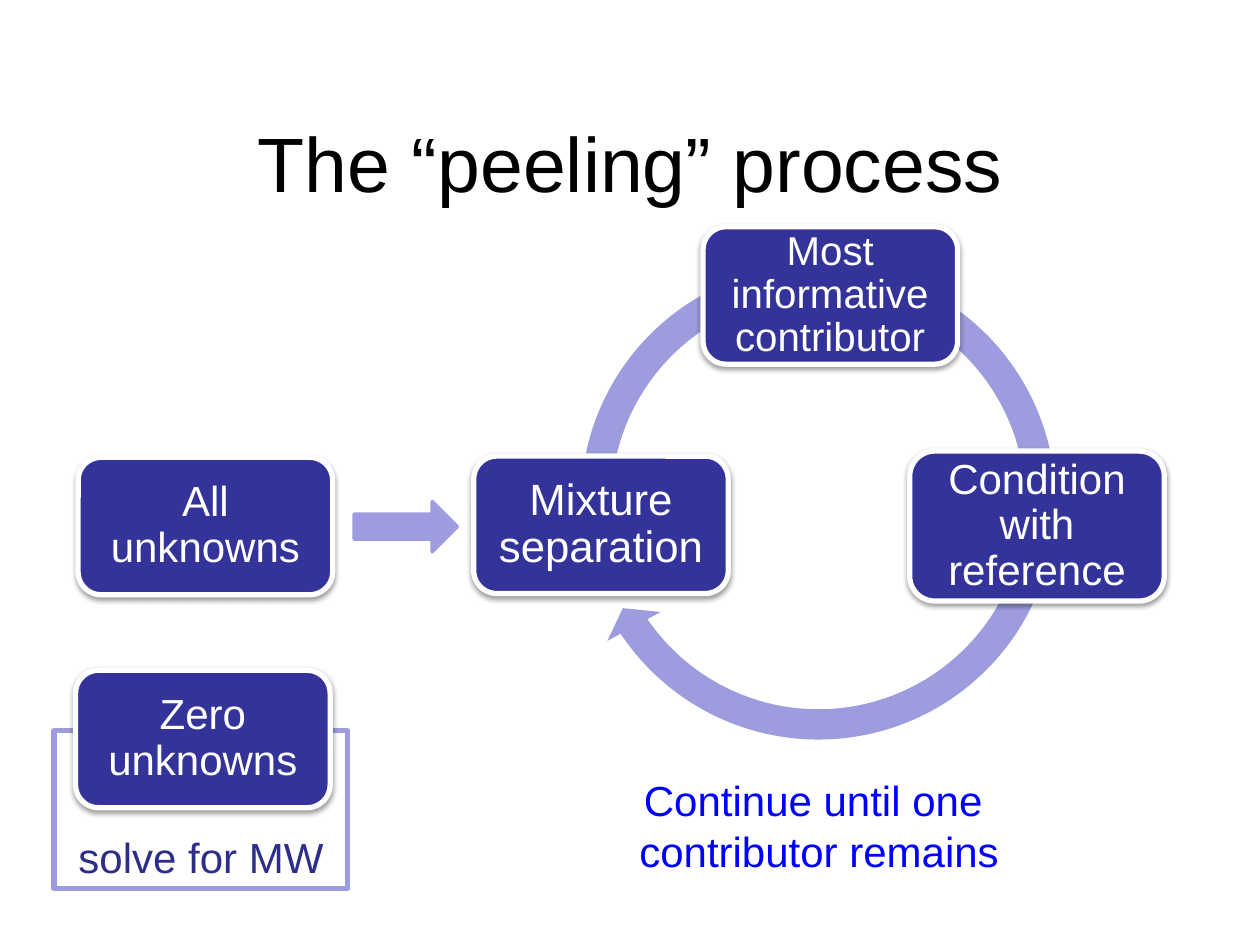
from lxml import etree
from pptx import Presentation
from pptx.dml.color import RGBColor
from pptx.enum.shapes import MSO_SHAPE
from pptx.enum.text import MSO_ANCHOR, PP_ALIGN
from pptx.oxml.ns import qn
from pptx.util import Inches, Pt

ROUND = MSO_SHAPE.ROUNDED_RECTANGLE
RECT = MSO_SHAPE.RECTANGLE
ARROW = MSO_SHAPE.RIGHT_ARROW
CYCLE = MSO_SHAPE.CIRCULAR_ARROW
MIDDLE, TOP, BOTTOM = MSO_ANCHOR.MIDDLE, MSO_ANCHOR.TOP, MSO_ANCHOR.BOTTOM
CENTER = PP_ALIGN.CENTER

COLORS = {"navy": "333399", "lilac": "9C9CDF", "white": "FFFFFF",
          "black": "000000", "blue": "0000FF", "indigo": "2D2D8A"}
FONT = "Arial"

TITLE = "The “peeling” process"
CAPTION = ["Continue until one ", "contributor remains"]
RESULT = "solve for MW"
CARD_WIDTH = 2.02
CARDS = [
    ("Condition with reference", 7.22, 3.58, 1.19, 24),
    ("Most informative contributor", 5.58, 1.8, 1.09, 23),
    ("Mixture separation", 3.76, 3.62, 1.09, 25),
    ("Zero unknowns", 0.6, 5.32, 1.09, 24),
    ("All unknowns", 0.62, 3.63, 1.09, 24),
]
CYCLE_ADJUSTMENTS = [0.06, 3.31, 138.36, 165.71, 0.06]


def rgb(name):
    return RGBColor.from_string(COLORS[name])


def write(s, text, size=24, color="white", anchor=MIDDLE, spacing=None, inset=None):
    tf = s.text_frame
    tf.word_wrap = True
    tf.vertical_anchor = anchor
    if inset is not None:
        tf.margin_left = tf.margin_right = Inches(inset)
        tf.margin_top = tf.margin_bottom = Inches(inset)
    lines = [text] if isinstance(text, str) else text
    for i, line in enumerate(lines):
        p = tf.paragraphs[0] if i == 0 else tf.add_paragraph()
        p.alignment = CENTER
        p.line_spacing = spacing
        r = p.add_run()
        r.text = line
        r.font.name = FONT
        r.font.size = Pt(size)
        r.font.color.rgb = rgb(color)


def add_shape(kind, left, top, width, height, fill, line=None, weight=3):
    s = slide.shapes.add_shape(kind, Inches(left), Inches(top), Inches(width), Inches(height))
    s.shadow.inherit = False
    s.fill.solid()
    s.fill.fore_color.rgb = rgb(fill)
    if line:
        s.line.color.rgb = rgb(line)
        s.line.width = Pt(weight)
    else:
        s.line.fill.background()
    return s


def add_textbox(left, top, width, height):
    return slide.shapes.add_textbox(Inches(left), Inches(top), Inches(width), Inches(height))


def add_shadow(s):
    effects = s._element.spPr.find(qn("a:effectLst"))
    shadow = etree.SubElement(effects, qn("a:outerShdw"), blurRad=str(Pt(3.1)),
                              dist=str(Pt(1.6)), dir="5400000", rotWithShape="0")
    color = etree.SubElement(shadow, qn("a:srgbClr"), val=COLORS["black"])
    etree.SubElement(color, qn("a:alpha"), val="38000")


prs = Presentation()
prs.slide_width, prs.slide_height = Inches(10), Inches(7.5)
slide = prs.slides.add_slide(prs.slide_layouts[6])

cycle = add_shape(CYCLE, 4.49, 1.98, 4.01, 4.01, "lilac")
cycle.rotation = 275.4
for i, value in enumerate(CYCLE_ADJUSTMENTS):
    cycle.adjustments[i] = value

write(add_textbox(0.75, 0.66, 8.51, 1.25), TITLE, size=44, color="black")
write(add_shape(RECT, 0.43, 5.8, 2.33, 1.25, "white", line="lilac"),
      RESULT, color="indigo", anchor=BOTTOM)
add_shape(ARROW, 2.81, 3.98, 0.82, 0.4, "lilac", line="lilac", weight=2)
write(add_textbox(4.94, 6.1, 3.12, 0.91), CAPTION, color="blue", anchor=TOP)

for text, left, top, height, size in CARDS:
    card = add_shape(ROUND, left, top, CARD_WIDTH, height, "navy", line="white")
    add_shadow(card)
    write(card, text, size=size, spacing=0.9, inset=0.1)

prs.save("out.pptx")
